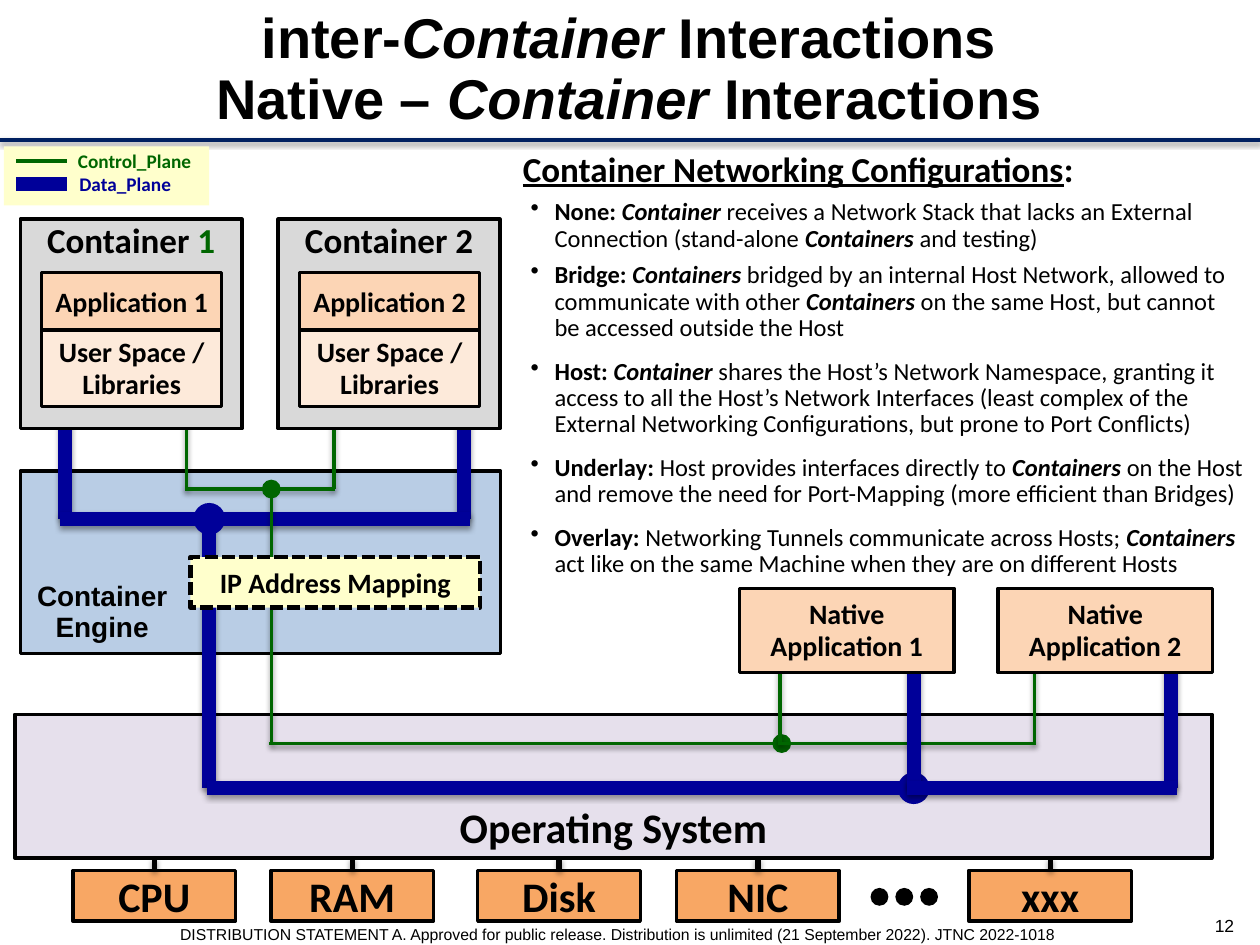
from dataclasses import dataclass

from lxml import etree
from pptx import Presentation
from pptx.dml.color import RGBColor
from pptx.enum.dml import MSO_LINE
from pptx.enum.shapes import MSO_CONNECTOR, MSO_SHAPE
from pptx.enum.text import MSO_ANCHOR, PP_ALIGN
from pptx.oxml import parse_xml
from pptx.oxml.ns import nsdecls, qn
from pptx.util import Cm, Pt

RECT, OVAL = MSO_SHAPE.RECTANGLE, MSO_SHAPE.OVAL
STRAIGHT = MSO_CONNECTOR.STRAIGHT
DASHED = MSO_LINE.SQUARE_DOT
LEFT, CENTER = PP_ALIGN.LEFT, PP_ALIGN.CENTER
TOP, MIDDLE, BOTTOM = MSO_ANCHOR.TOP, MSO_ANCHOR.MIDDLE, MSO_ANCHOR.BOTTOM


@dataclass(frozen=True)
class Theme:
    heading_font: str = "Arial"
    body_font: str = "Calibri"
    ink: str = "000000"
    rule: str = "002060"
    control: str = "006600"
    data: str = "000099"
    engine: str = "B9CDE5"
    system: str = "E6E0EC"
    container: str = "D9D9D9"
    application: str = "FCD5B5"
    libraries: str = "FDEADA"
    device: str = "F8A764"
    note: str = "FFFFCC"
    title_size: float = 32
    system_size: float = 24
    section_size: float = 20
    label_size: float = 16
    bullet_size: float = 14
    legend_size: float = 11
    page_size: float = 10
    footer_size: float = 9
    outline: float = 2
    control_width: float = 2
    data_width: float = 8


THEME = Theme()
CONTROL = (THEME.control, THEME.control_width)
DATA = (THEME.data, THEME.data_width)

CONFIGURATIONS = [
    ("None: ", "*Container *receives a Network Stack that lacks an External Connection "
               "(stand-alone *Containers* and testing)"),
    ("Bridge: ", "*Containers *bridged by an internal Host Network, allowed to communicate with "
                 "other *Containers* on the same Host, but cannot be accessed outside the Host"),
    ("Host: ", "*Container *shares the Host’s Network Namespace, granting it access to all the "
               "Host’s Network Interfaces (least complex of the External Networking "
               "Configurations, but prone to Port Conflicts)"),
    ("Underlay: ", "Host provides interfaces directly to *Containers* on the Host and remove "
                   "the need for Port-Mapping (more efficient than Bridges)"),
    ("Overlay: ", "Networking Tunnels communicate across Hosts; *Containers* act like on the "
                  "same Machine when they are on different Hosts"),
]
DEVICES = [("CPU", 1.47), ("RAM", 5.46), ("Disk", 9.63), ("NIC", 13.64), ("xxx", 19.53)]


def style(font, size, color=THEME.ink, bold=True, italic=False, name=THEME.body_font):
    font.size, font.name, font.bold, font.italic = Pt(size), name, bold, italic
    font.color.rgb = RGBColor.from_string(color)


def add_run(paragraph, text, size, **look):
    run = paragraph.add_run()
    run.text = text
    style(run.font, size, **look)
    return run


def write(shape, text, size, align=CENTER, anchor=MIDDLE, spacing=None, wrap=True, **look):
    """Set one paragraph of uniform text."""
    frame = shape.text_frame
    frame.word_wrap, frame.vertical_anchor = wrap, anchor
    frame.text = text
    paragraph = frame.paragraphs[0]
    paragraph.alignment = align
    if spacing:
        paragraph.line_spacing = Pt(spacing)
    for run in paragraph.runs:
        style(run.font, size, **look)
    return frame


def add_label(slide, text, x, y, width, height, size, **options):
    box = slide.shapes.add_textbox(Cm(x), Cm(y), Cm(width), Cm(height))
    return write(box, text, size, **options)


def add_block(slide, x, y, width, height, fill, outlined=True, kind=RECT):
    block = slide.shapes.add_shape(kind, Cm(x), Cm(y), Cm(width), Cm(height))
    block.shadow.inherit = False
    block.fill.solid()
    block.fill.fore_color.rgb = RGBColor.from_string(fill)
    if outlined:
        block.line.color.rgb = RGBColor.from_string(THEME.ink)
        block.line.width = Pt(THEME.outline)
    else:
        block.line.fill.background()
    return block


def add_node(slide, x, y, diameter, color):
    """Draw a dot centred on x, y."""
    add_block(slide, x - diameter / 2, y - diameter / 2, diameter, diameter, color, False, OVAL)


def add_wire(slide, x1, y1, x2, y2, plane, shadow=True):
    color, width = plane
    wire = slide.shapes.add_connector(STRAIGHT, Cm(x1), Cm(y1), Cm(x2), Cm(y2))
    wire.line.color.rgb = RGBColor.from_string(color)
    wire.line.width = Pt(width)
    effects = parse_xml(f"<a:effectLst {nsdecls('a')}/>")
    if shadow:
        cast = etree.SubElement(effects, qn("a:outerShdw"), blurRad=str(Pt(3.1)),
                                dist=str(Pt(1.6)), dir="5400000", rotWithShape="0")
        black = etree.SubElement(cast, qn("a:srgbClr"), val=THEME.ink)
        etree.SubElement(black, qn("a:alpha"), val="38000")
    wire._element.spPr.append(effects)


def add_bus(slide, drops, top, level, plane, overhang):
    """Join vertical drops with a horizontal wire at the given level."""
    for x in drops:
        add_wire(slide, x, top, x, level, plane)
    add_wire(slide, min(drops) - overhang, level, max(drops) + overhang, level, plane)


def add_title(slide):
    frame = add_label(slide, "", 2.13, 0.08, 21.11, 2.64, THEME.title_size, spacing=35)
    paragraph = frame.paragraphs[0]
    for row, opening in enumerate(("inter-", "Native – ")):
        if row:
            paragraph.add_line_break()
        for text, italic in ((opening, False), ("Container", True), (" Interactions", False)):
            add_run(paragraph, text, THEME.title_size, italic=italic, name=THEME.heading_font)


def add_configurations(slide):
    frame = add_label(slide, "Container Networking Configurations", 10.29, 2.84, 15.09, 9.02,
                      THEME.section_size, align=LEFT, anchor=TOP)
    heading = frame.paragraphs[0]
    heading.runs[0].font.underline = True
    add_run(heading, ":", THEME.section_size)
    for index, (term, description) in enumerate(CONFIGURATIONS):
        paragraph = frame.add_paragraph()
        properties = paragraph._p.get_or_add_pPr()
        properties.set("marL", str(Cm(0.64)))
        properties.set("indent", str(Cm(-0.48)))
        etree.SubElement(properties, qn("a:buChar"), char="•")
        paragraph.line_spacing = Pt(15)
        paragraph.space_before = Pt(0 if index else 6)
        paragraph.space_after = Pt(10 if index else 6)
        add_run(paragraph, term, THEME.bullet_size)
        for part, text in enumerate(description.split("*")):
            if text:
                emphasis = part % 2 == 1
                add_run(paragraph, text, THEME.bullet_size, bold=emphasis, italic=emphasis)


def add_container(slide, number, x, number_color):
    add_block(slide, x, 4.42, 4.47, 4.22, THEME.container)
    application = add_block(slide, x + 0.43, 5.49, 3.63, 1.17, THEME.application)
    write(application, f"Application {number}", THEME.label_size)
    libraries = add_block(slide, x + 0.43, 6.65, 3.63, 1.55, THEME.libraries)
    write(libraries, "User Space / Libraries", THEME.label_size, spacing=18)
    name = add_label(slide, "Container", x, 4.29, 4.47, 1.12, THEME.section_size, anchor=TOP)
    add_run(name.paragraphs[0], f" {number}", THEME.section_size, color=number_color)


def add_device(slide, name, x):
    device = add_block(slide, x, 17.55, 3.28, 1.02, THEME.device)
    write(device, name, THEME.system_size)
    add_wire(slide, x + 1.64, 17.3, x + 1.64, 17.55, (THEME.ink, 3))


def add_legend(slide):
    add_block(slide, 0.08, 2.95, 4.14, 1.19, THEME.note, outlined=False)
    for name, x, y, plane in (("Control_Plane", 1.32, 3.25, CONTROL),
                              ("Data_Plane", 1.35, 3.71, DATA)):
        add_wire(slide, 0.33, y, 1.35, y, plane, shadow=False)
        add_label(slide, name, x, y - 0.36, 2.82, 0.74, THEME.legend_size, align=LEFT,
                  anchor=TOP, wrap=False, color=plane[0])


def add_footer(slide):
    statement = add_label(
        slide, "DISTRIBUTION STATEMENT A. Approved for public release. Distribution is unlimited "
        "(21 September 2022). JTNC 2022-1018", 0, 18.64, 25.4, 0.38, THEME.footer_size,
        anchor=TOP, bold=False, name=THEME.heading_font)
    statement.margin_left = statement.margin_top = statement.margin_bottom = 0
    statement.margin_right = Cm(0.51)
    add_label(slide, "12", 24, 18.26, 1.37, 0.79, THEME.page_size, bold=False,
              name=THEME.heading_font)


def add_engine_wiring(slide):
    add_bus(slide, (1.32, 9.35), 8.46, 10.46, DATA, 0.12)
    add_bus(slide, (3.76, 6.73), 8.46, 9.86, CONTROL, 0.03)
    add_label(slide, "Container Engine", 0.08, 11.58, 3.96, 1.55, THEME.label_size,
              anchor=TOP, spacing=18, name=THEME.heading_font)
    for x, top, level, end, plane, diameter in ((5.47, 9.86, 14.99, 15.76, CONTROL, 0.38),
                                                (4.22, 10.46, 15.89, 18.42, DATA, 0.64)):
        add_wire(slide, x, top, x, level, plane)
        add_wire(slide, x - 0.04, level, end, level, plane)
        add_node(slide, x, top, diameter, plane[0])
        add_node(slide, end, level, diameter, plane[0])
    mapping = add_block(slide, 3.84, 11.23, 5.84, 1.02, THEME.note)
    mapping.line.width, mapping.line.dash_style = Pt(2.5), DASHED
    frame = write(mapping, "IP Address Mapping", THEME.label_size)
    frame.margin_top = frame.margin_bottom = 0


def main():
    deck = Presentation()
    deck.slide_width, deck.slide_height = Cm(25.4), Cm(19.05)
    slide = deck.slides.add_slide(deck.slide_layouts[6])
    add_wire(slide, 0, 2.82, 25.4, 2.82, (THEME.rule, 2))
    add_footer(slide)
    add_block(slide, 0.41, 9.5, 9.68, 3.68, THEME.engine)
    system = add_block(slide, 0.3, 14.4, 24.13, 2.9, THEME.system)
    write(system, "Operating System", THEME.system_size, anchor=BOTTOM)
    for step in range(3):
        add_node(slide, 17.73 + 0.5 * step, 18.08, 0.36, THEME.ink)
    add_engine_wiring(slide)
    for name, x in DEVICES:
        add_device(slide, name, x)
    add_bus(slide, (15.72, 20.85), 13.18, 14.99, CONTROL, 0.04)
    add_bus(slide, (18.42, 23.6), 13.18, 15.89, DATA, 0.13)
    add_configurations(slide)
    for number, x in ((1, 14.91), (2, 20.12)):
        native = add_block(slide, x, 11.86, 4.32, 1.7, THEME.application)
        write(native, f"Native Application {number}", THEME.label_size, spacing=18)
    add_title(slide)
    add_legend(slide)
    add_container(slide, 1, 0.41, THEME.control)
    add_container(slide, 2, 5.61, THEME.ink)
    deck.save("out.pptx")


if __name__ == "__main__":
    main()
